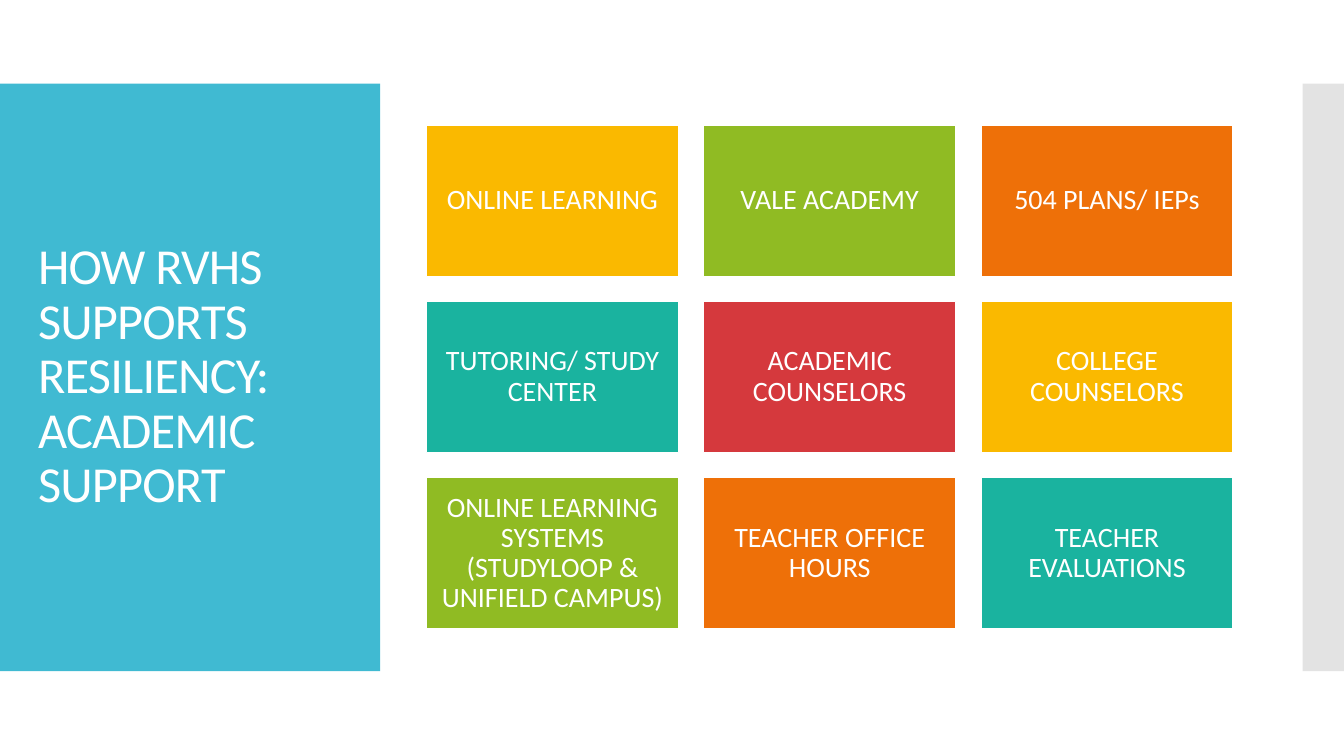
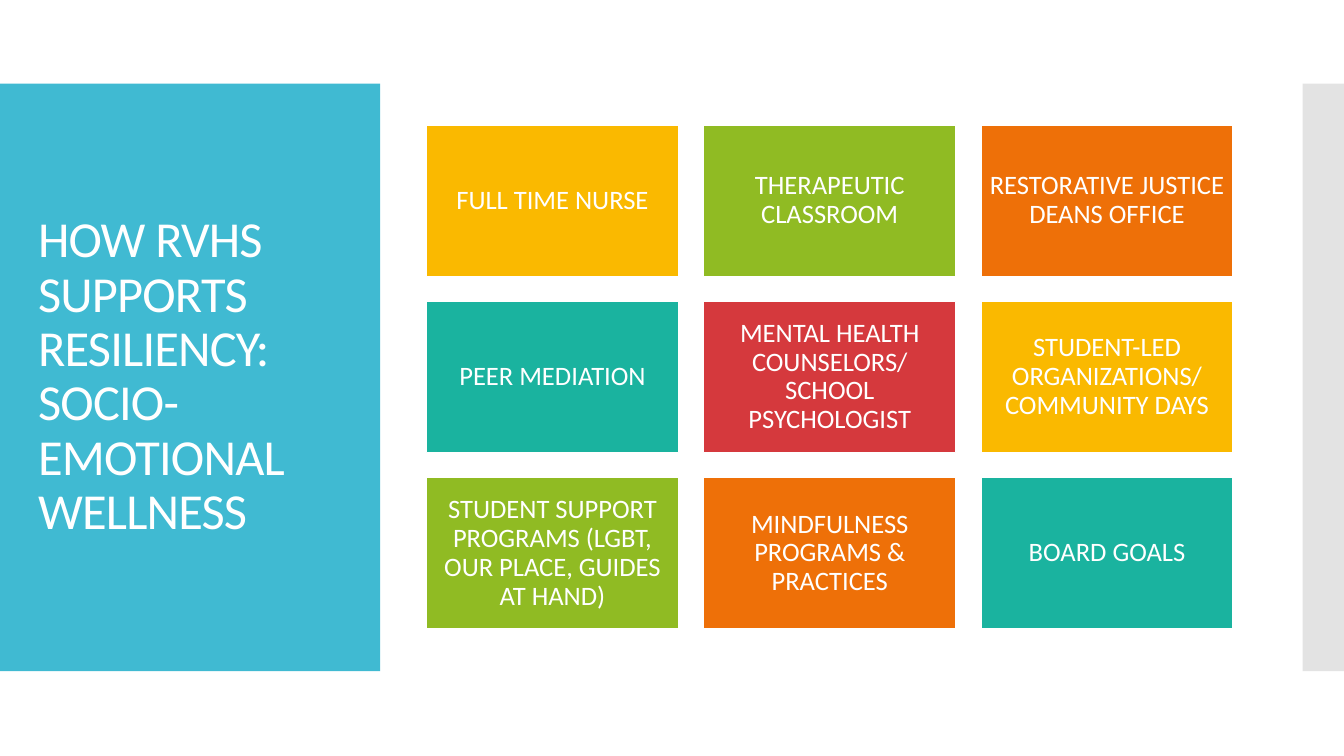
import pptx
import pptx.util
import pptx.dml.color
import pptx.enum.shapes
import pptx.enum.text
import pptx.oxml.ns
import lxml.etree

Inches = pptx.util.Inches
Pt = pptx.util.Pt
ALIGN = pptx.enum.text.PP_ALIGN

FONT = "Calibri"
WHITE, BLUE, GREY = "FFFFFF", "40BAD2", "C8C8C8"
GOLD, GREEN, ORANGE, TEAL, RED = "FAB900", "90BB23", "EE7008", "1AB39F", "D5393D"
TILES = [GOLD, GREEN, ORANGE, TEAL, RED, GOLD, GREEN, ORANGE, TEAL]

COLS = 3
LEFT, TOP = 4.23, 1.24
WIDE, HIGH, GAP = 2.5, 1.5, 0.25

SLIDES = [
    ("HOW RVHS SUPPORTS RESILIENCY: ACADEMIC SUPPORT", 20, [
        "ONLINE LEARNING", "VALE ACADEMY", "504 PLANS/ IEPs",
        "TUTORING/ STUDY CENTER", "ACADEMIC COUNSELORS", "COLLEGE COUNSELORS",
        "ONLINE LEARNING SYSTEMS (STUDYLOOP & UNIFIELD CAMPUS)",
        "TEACHER OFFICE HOURS", "TEACHER EVALUATIONS",
    ]),
    ("HOW RVHS SUPPORTS RESILIENCY: SOCIO-EMOTIONAL WELLNESS", 19, [
        "FULL TIME NURSE", "THERAPEUTIC CLASSROOM",
        "RESTORATIVE JUSTICE DEANS OFFICE",
        "PEER MEDIATION", "MENTAL HEALTH COUNSELORS/ SCHOOL PSYCHOLOGIST",
        "STUDENT-LED ORGANIZATIONS/ COMMUNITY DAYS",
        "STUDENT SUPPORT PROGRAMS (LGBT, OUR PLACE, GUIDES AT HAND)",
        "MINDFULNESS PROGRAMS & PRACTICES", "BOARD GOALS",
    ]),
]


def color(code):
    return pptx.dml.color.RGBColor.from_string(code)


def rect(slide, x, y, w, h, fill):
    shape = slide.shapes.add_shape(
        pptx.enum.shapes.MSO_SHAPE.RECTANGLE,
        Inches(x), Inches(y), Inches(w), Inches(h))
    shape.shadow.inherit = False
    shape.fill.solid()
    shape.fill.fore_color.rgb = color(fill)
    shape.line.fill.background()
    return shape


def fade(shape, share):
    """Make a solid fill partly opaque; share is a percentage."""
    tone = shape.fill._xPr.find(".//" + pptx.oxml.ns.qn("a:srgbClr"))
    alpha = lxml.etree.SubElement(tone, pptx.oxml.ns.qn("a:alpha"))
    alpha.set("val", str(share * 1000))


def write(shape, text, size, align):
    """Set white, vertically centred text and return its run."""
    frame = shape.text_frame
    frame.text = text
    frame.word_wrap = True
    frame.vertical_anchor = pptx.enum.text.MSO_ANCHOR.MIDDLE
    para = frame.paragraphs[0]
    para.alignment = align
    para.line_spacing = 0.9
    run = para.runs[0]
    run.font.name = FONT
    run.font.size = Pt(size)
    run.font.color.rgb = color(WHITE)
    return run


def bands(slide):
    rect(slide, 0, 0.83, 3.77, 5.83, BLUE)
    fade(rect(slide, 12.92, 0.83, 0.42, 5.83, GREY), 50)


def title(slide, text):
    box = slide.shapes.add_textbox(
        Inches(0.28), Inches(1.23), Inches(3.22), Inches(5.03))
    run = write(box, text, 36, ALIGN.LEFT)
    run.font._element.set("spc", "-60")


def tile(slide, x, y, fill, text, size):
    shape = rect(slide, x, y, WIDE, HIGH, fill)
    shape.line.color.rgb = color(WHITE)
    shape.line.width = Pt(0.85)
    frame = shape.text_frame
    frame.margin_left = frame.margin_right = Inches(0.08)
    frame.margin_top = frame.margin_bottom = Inches(0.08)
    write(shape, text, size, ALIGN.CENTER)


def grid(slide, labels, size):
    for i, (fill, text) in enumerate(zip(TILES, labels)):
        row, col = divmod(i, COLS)
        tile(slide, LEFT + col * (WIDE + GAP), TOP + row * (HIGH + GAP),
             fill, text, size)


def main():
    deck = pptx.Presentation()
    deck.slide_width = Inches(13.33)
    deck.slide_height = Inches(7.5)
    for head, size, labels in SLIDES:
        slide = deck.slides.add_slide(deck.slide_layouts[6])
        bands(slide)
        title(slide, head)
        grid(slide, labels, size)
    deck.save("out.pptx")


if __name__ == "__main__":
    main()
